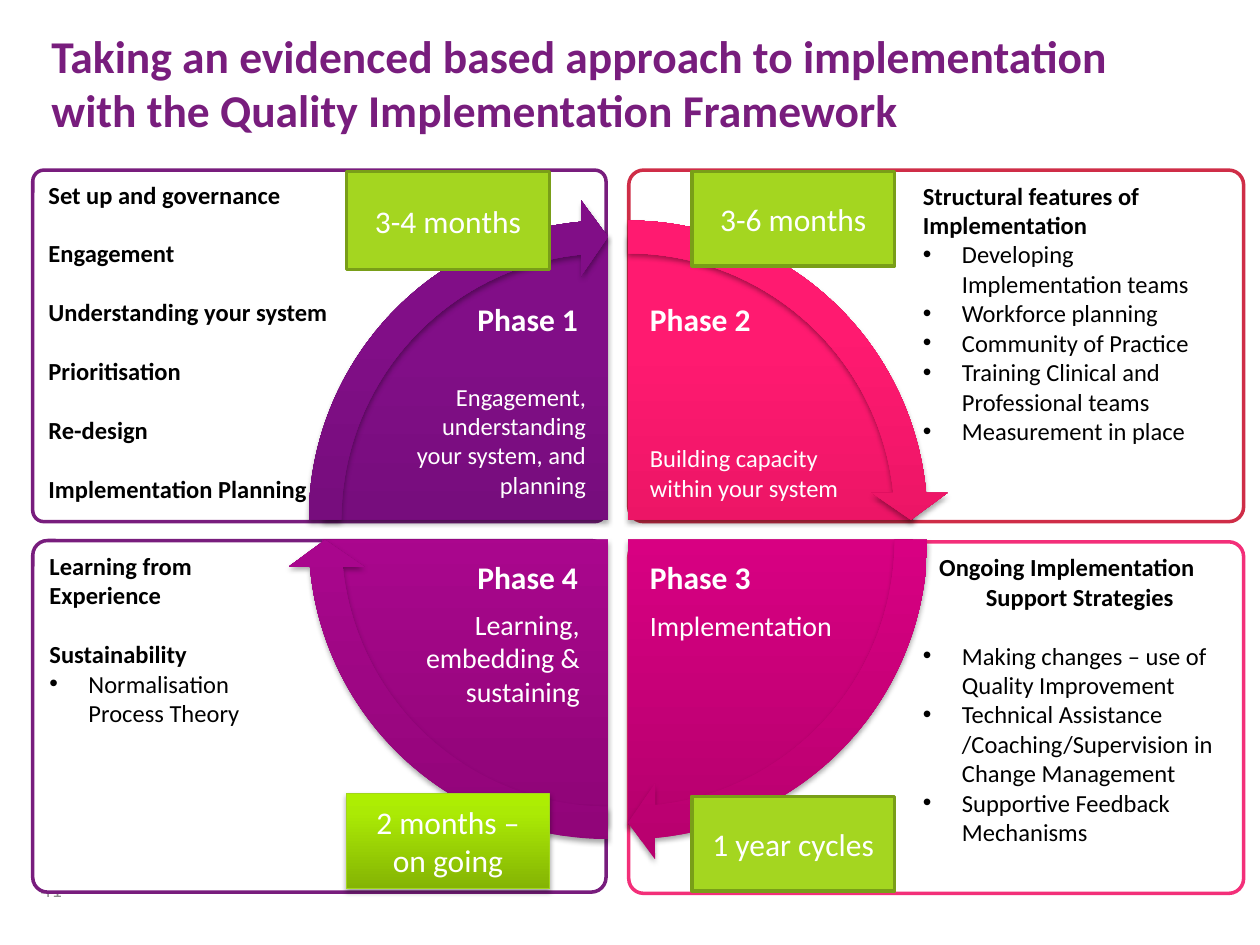
"""Build the four-phase Quality Implementation Framework slide."""
import copy

import lxml.etree
import pptx
import pptx.dml.color
import pptx.enum.shapes
import pptx.enum.text
import pptx.oxml
import pptx.oxml.ns
import pptx.util

Inches = pptx.util.Inches
Pt = pptx.util.Pt
RGBColor = pptx.dml.color.RGBColor
SHAPE = pptx.enum.shapes.MSO_SHAPE
ALIGN = pptx.enum.text.PP_ALIGN
ANCHOR = pptx.enum.text.MSO_ANCHOR
qn = pptx.oxml.ns.qn

WHITE = RGBColor(0xFF, 0xFF, 0xFF)
BLACK = RGBColor(0x00, 0x00, 0x00)
GREY = RGBColor(0x8C, 0x8C, 0x8C)
PURPLE = RGBColor(0x78, 0x1D, 0x7D)
CRIMSON = RGBColor(0xCF, 0x2D, 0x47)
PINK = RGBColor(0xF3, 0x2F, 0x79)
LIME = RGBColor(0xA4, 0xD6, 0x20)
OLIVE = RGBColor(0x79, 0x9E, 0x18)
LIME_EDGE = RGBColor(0xA2, 0xD6, 0x1B)
PHASE_1 = [RGBColor(0x63, 0x0B, 0x68), RGBColor(0x81, 0x0E, 0x87), RGBColor(0x83, 0x0C, 0x8A)]
PHASE_2 = [RGBColor(0xCB, 0x0D, 0x55), RGBColor(0xFF, 0x1A, 0x70), RGBColor(0xFF, 0x1B, 0x71)]
PHASE_3 = [RGBColor(0xB7, 0x00, 0x6E), RGBColor(0xED, 0x00, 0x8F), RGBColor(0xEE, 0x00, 0x8F)]
PHASE_4 = [RGBColor(0x8F, 0x05, 0x77), RGBColor(0xBA, 0x07, 0x9B), RGBColor(0xBE, 0x04, 0x9E)]
ONGOING = [RGBColor(0x84, 0xB4, 0x04), RGBColor(0xAB, 0xEA, 0x05), RGBColor(0xAE, 0xEF, 0x00)]

SHADOW = (
    '<a:outerShdw xmlns:a="http://schemas.openxmlformats.org/drawingml/2006/main" '
    'blurRad="39370" dist="22860" dir="5400000" rotWithShape="0">'
    '<a:srgbClr val="000000"><a:alpha val="35000"/></a:srgbClr></a:outerShdw>'
)
GAP = 16.8

deck = pptx.Presentation()
deck.slide_width, deck.slide_height = Inches(10), Inches(7.5)
slide = deck.slides.add_slide(deck.slide_layouts[6])


def write(shape, paragraphs, size, color, bold=False, align=ALIGN.LEFT, **frame_format):
    frame = shape.text_frame
    frame_format = {"word_wrap": True, "vertical_anchor": ANCHOR.TOP, **frame_format}
    for name, value in frame_format.items():
        setattr(frame, name, value)
    for index, (text, style) in enumerate(paragraphs):
        paragraph = frame.add_paragraph() if index else frame.paragraphs[0]
        paragraph.text = text
        paragraph.alignment = align
        if "before" in style:
            paragraph.space_before = Pt(style["before"])
        properties = paragraph._p.get_or_add_pPr()
        properties.set("marL", str(Inches(style.get("left", 0))))
        properties.set("indent", str(Inches(style.get("first", 0))))
        if style.get("bullet"):
            lxml.etree.SubElement(properties, qn("a:buFont")).set("typeface", "Arial")
            lxml.etree.SubElement(properties, qn("a:buChar")).set("char", "•")
        font_format = {"name": "Calibri", "size": Pt(size), "bold": style.get("bold", bold)}
        for run in paragraph.runs:
            for name, value in font_format.items():
                setattr(run.font, name, value)
            run.font.color.rgb = color


def draw(kind, box, fill, edge=None, width=2, adjustments=()):
    shape = slide.shapes.add_shape(kind, *map(Inches, box))
    for index, value in enumerate(adjustments):
        shape.adjustments[index] = value
    if edge is None:
        shape.line.fill.background()
    else:
        shape.line.color.rgb = edge
        shape.line.width = Pt(width)
    shape.shadow.inherit = False
    if not isinstance(fill, list):
        shape.fill.solid()
        shape.fill.fore_color.rgb = fill
        return shape
    shape.fill.gradient()
    shape.fill.gradient_angle = 90
    stops = shape._element.spPr.find(".//" + qn("a:gsLst"))
    stops.append(copy.deepcopy(stops[-1]))
    for stop, position, color in zip(shape.fill.gradient_stops, (0, 0.8, 1), fill):
        stop.position = position
        stop.color.rgb = color
    shape._element.spPr.find(qn("a:effectLst")).append(pptx.oxml.parse_xml(SHADOW))
    return shape


page_number = slide.shapes.add_textbox(*map(Inches, (0.12, 6.86, 0.47, 0.4)))
write(page_number, [("41", {})], 12, GREY, align=ALIGN.RIGHT, vertical_anchor=ANCHOR.MIDDLE)

near = {"left": 0.31, "bold": False}
near_item = {**near, "first": -0.31, "bullet": True}
heading = {"left": 0.21}
item = {"left": 0.52, "first": -0.31, "bullet": True, "bold": False}
spaced = {"before": GAP}
left_margins, right_margins = (0.1, 0.63), (2.09, 0.2)

panels = [
    ((0.26, 4.29, 4.55, 2.79), 0.042, PURPLE, left_margins, [
        ("Learning from", {}),
        ("Experience", {}),
        ("Sustainability", spaced),
        ("Normalisation", near_item),
        ("Process Theory", near),
    ]),
    ((4.99, 4.3, 4.88, 2.79), 0.042, PINK, right_margins, [
        ("Ongoing Implementation\v\tSupport Strategies", {**heading, "first": 0.13}),
        ("Making changes – use of Quality Improvement", {**item, **spaced}),
        ("Technical Assistance /Coaching/Supervision in Change Management", item),
        ("Supportive Feedback Mechanisms", item),
    ]),
    ((4.99, 1.35, 4.88, 2.79), 0.042, CRIMSON, right_margins, [
        ("Structural features of Implementation", heading),
        ("Developing Implementation teams", item),
        ("Workforce planning", item),
        ("Community of Practice", item),
        ("Training Clinical and Professional teams", item),
        ("Measurement in place", item),
    ]),
    ((0.26, 1.35, 4.55, 2.79), 0.032, PURPLE, left_margins, [
        ("Set up and governance", {}),
        ("Engagement", spaced),
        ("Understanding your system", spaced),
        ("Prioritisation", spaced),
        ("Re-design", spaced),
        ("Implementation Planning", spaced),
    ]),
]
for box, corner, edge, (left, right), paragraphs in panels:
    panel = draw(SHAPE.ROUNDED_RECTANGLE, box, WHITE, edge, adjustments=[corner])
    write(panel, paragraphs, 14, BLACK, bold=True,
          margin_left=Inches(left), margin_right=Inches(right))

title = slide.shapes.add_textbox(*map(Inches, (0.31, 0.17, 8.84, 0.99)))
write(title, [("Taking an evidenced based approach to implementation "
               "with the Quality Implementation Framework", {})], 26, PURPLE, bold=True)

quarters = [
    (2.72, 1.86, 162, PHASE_2),
    (2.72, 2.02, 0, PHASE_3),
    (2.56, 2.02, 54, PHASE_4),
    (2.56, 1.86, 108, PHASE_1),
]
for left, top, start, colors in quarters:
    draw(SHAPE.PIE, (left, top, 4.53, 4.53), colors, adjustments=[start, (start + 54) % 216])
for left, top, start, colors in quarters:
    draw(SHAPE.CIRCULAR_ARROW, (left - 0.28, top - 0.28, 5.09, 5.09), colors,
         adjustments=[0.051, 3.275, start + 50.725, start, 0.059])

phase_names = [("Phase 1", 3.69, 2.33), ("Phase 2", 5.06, 2.33),
               ("Phase 3", 5.06, 4.38), ("Phase 4", 3.69, 4.38)]
for name, left, top in phase_names:
    label = slide.shapes.add_textbox(*map(Inches, (left, top, 1.01, 0.4)))
    write(label, [(name, {})], 18, WHITE, bold=True, word_wrap=False)

summaries = [
    ("Engagement, understanding your system, and planning",
     (3.11, 2.98, 1.64, 1.04), 14, ALIGN.RIGHT),
    ("Learning, embedding & sustaining", (3.06, 4.77, 1.64, 0.91), 16, ALIGN.RIGHT),
    ("Building capacity within your system", (5.06, 3.47, 1.77, 0.57), 14, ALIGN.LEFT),
    ("Implementation", (5.06, 4.78, 1.77, 0.37), 16, ALIGN.LEFT),
]
for text, box, size, align in summaries:
    summary = slide.shapes.add_textbox(*map(Inches, box))
    write(summary, [(text, {})], size, WHITE, align=align)

durations = [
    ("3-4 months", (2.75, 1.36, 1.61, 0.78), LIME, OLIVE, 2),
    ("3-6 months", (5.49, 1.36, 1.61, 0.75), LIME, OLIVE, 2),
    ("2 months – on going", (2.75, 6.3, 1.61, 0.75), ONGOING, LIME_EDGE, 0.75),
    ("1 year cycles", (5.49, 6.32, 1.61, 0.75), LIME, OLIVE, 2),
]
for text, box, fill, edge, width in durations:
    duration = draw(SHAPE.RECTANGLE, box, fill, edge, width)
    write(duration, [(text, {})], 18, WHITE, align=ALIGN.CENTER, vertical_anchor=ANCHOR.MIDDLE)

deck.save("out.pptx")
